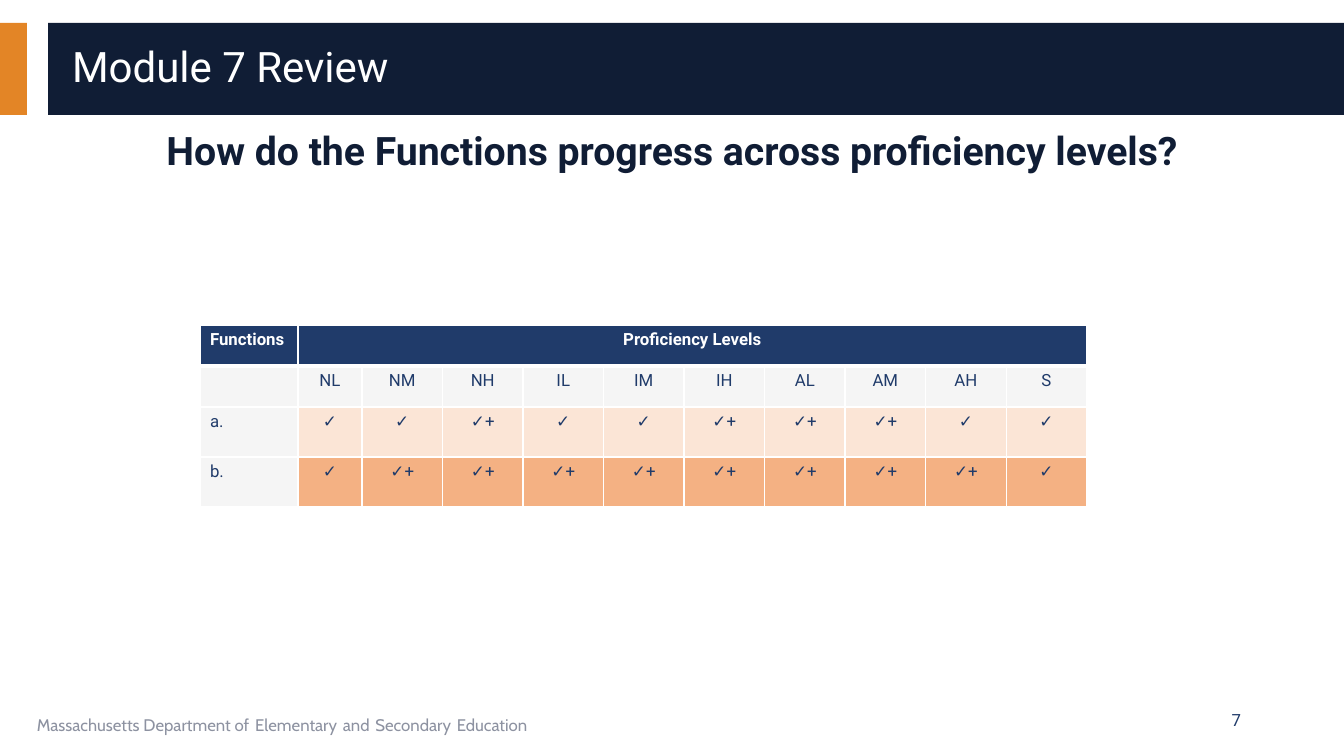
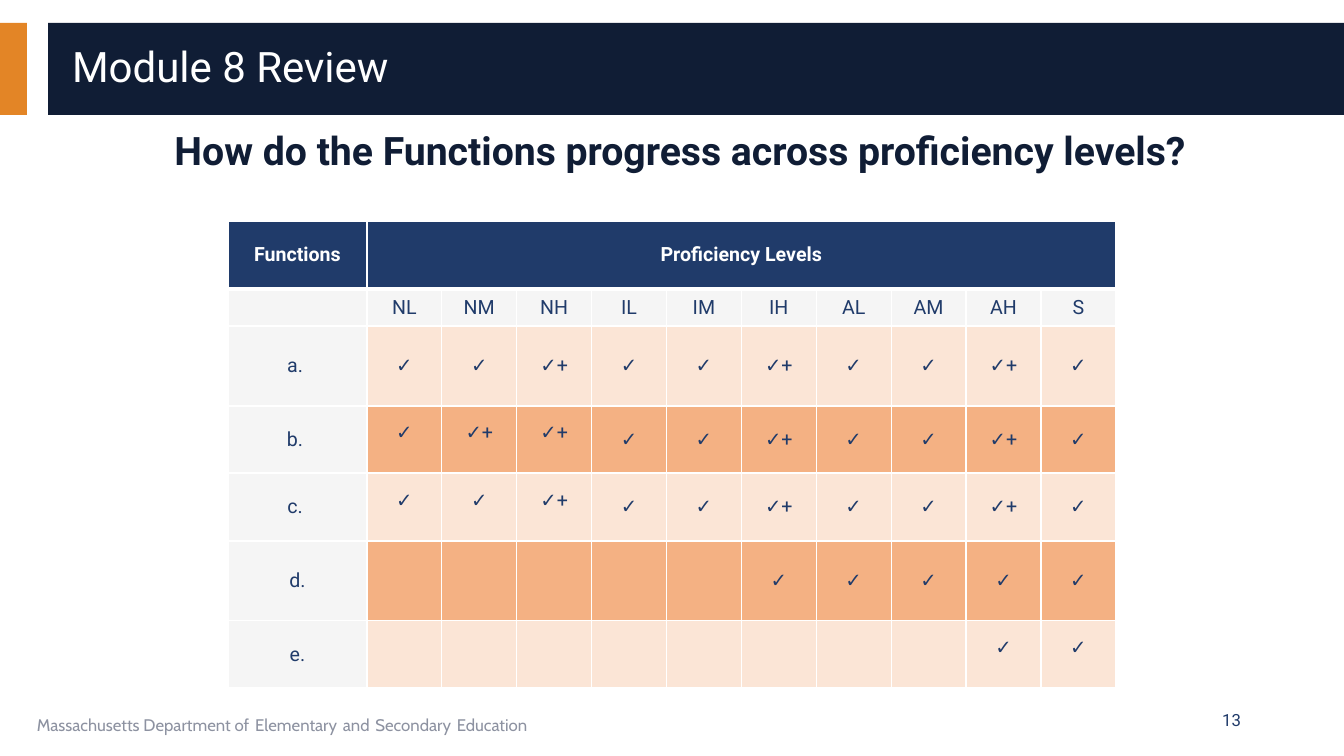
from lxml import etree
from pptx import Presentation
from pptx.dml.color import RGBColor
from pptx.enum.shapes import MSO_SHAPE
from pptx.enum.text import MSO_ANCHOR, PP_ALIGN
from pptx.oxml.ns import qn
from pptx.util import Pt

RECTANGLE = MSO_SHAPE.RECTANGLE
TOP, MIDDLE = MSO_ANCHOR.TOP, MSO_ANCHOR.MIDDLE
LEFT, CENTER, RIGHT = PP_ALIGN.LEFT, PP_ALIGN.CENTER, PP_ALIGN.RIGHT

# Shared style
SCALE = 12192000 / 1344  # EMU per px
NAVY, BLUE, ORANGE, WHITE = "101D35", "203B6A", "E38526", "FFFFFF"
GRAY, LABEL_FILL = "8D92A1", "F5F5F5"
BAND_FILLS = ["FBE5D6", "F4B183"]
FONT, FOOTER_FONT = "Roboto", "Cabin"
FOOTER = ["Massachusetts Department of", "Elementary", "and", "Secondary", "Education"]
QUESTION = "How do the Functions progress across proficiency levels?"
LEVELS = ",NL,NM,NH,IL,IM,IH,AL,AM,AH,S"

# Table rows hold a label and one mark per level; raised cells sit a little higher
REVIEWS = [
    {
        "title": "Module 7 Review", "number": "7", "question": (46, 1252),
        "corner": (200, 325), "widths": [98, 64] + [725 / 9] * 9,
        "heights": [41, 41, 50, 50],
        "size": 12, "anchor": TOP, "label_align": LEFT, "raised": set(),
        "rows": [
            "a.,✓,✓,✓+,✓,✓,✓+,✓+,✓+,✓,✓",
            "b.,✓,✓+,✓+,✓+,✓+,✓+,✓+,✓+,✓+,✓",
        ],
    },
    {
        "title": "Module 8 Review", "number": "13", "question": (45, 1270),
        "corner": (228, 221), "widths": [139] + [749 / 10] * 10,
        "heights": [68, 37, 80, 67, 68, 80, 67],
        "size": 14, "anchor": MIDDLE, "label_align": CENTER,
        "raised": {(3, 1), (3, 2), (3, 3), (4, 1), (4, 2), (4, 3), (6, 9), (6, 10)},
        "rows": [
            "a. ,✓,✓,✓+,✓,✓,✓+,✓,✓,✓+,✓",
            "b. ,✓,✓+,✓+,✓,✓,✓+,✓,✓,✓+,✓",
            "c. ,✓,✓,✓+,✓,✓,✓+,✓,✓,✓+,✓",
            "d.,,,,,,✓,✓,✓,✓,✓",
            "e.,,,,,,,,,✓,✓",
        ],
    },
]


def px(length):
    return round(length * SCALE)


def style(paragraph, size, color, font=FONT, bold=False, align=LEFT):
    paragraph.alignment = align
    for run in paragraph.runs:
        run.font.size = Pt(size)
        run.font.name = font
        run.font.bold = bold
        run.font.color.rgb = RGBColor.from_string(color)


presentation = Presentation()
presentation.slide_width, presentation.slide_height = px(1344), px(756)
layout = presentation.slide_layouts[5]
layout_title, *unused = layout.placeholders
for placeholder in unused:
    placeholder.element.getparent().remove(placeholder.element)

for index, review in enumerate(REVIEWS):
    slide = presentation.slides.add_slide(layout)

    # Bands and footer: made once, then moved to the layout
    if index == 0:
        shared = []
        for left, width, color in [(0, 27, ORANGE), (48, 1296, NAVY)]:
            band = slide.shapes.add_shape(RECTANGLE, px(left), px(23), px(width), px(92))
            band.shadow.inherit = False
            band.fill.solid()
            band.fill.fore_color.rgb = RGBColor.from_string(color)
            band.line.fill.background()
            shared.append(band)
        footer = slide.shapes.add_textbox(px(27), px(701), px(851), px(40))
        footer.text_frame.word_wrap = True
        footer.text_frame.vertical_anchor = MIDDLE
        paragraph = footer.text_frame.paragraphs[0]
        for word in FOOTER:
            if paragraph.runs:
                paragraph.add_run().text = " "
            paragraph.add_run().text = word
        style(paragraph, 12, GRAY, FOOTER_FONT)
        for space in paragraph.runs[1::2]:
            space.font.size = Pt(18)
        shared.append(footer)
        for shape in shared:
            layout_title.element.addprevious(shape.element)

    # Title
    title = slide.shapes.title
    title.left, title.top, title.width, title.height = px(62), px(39), px(1254), px(60)
    title.text_frame.text = review["title"]
    title.text_frame.vertical_anchor = MIDDLE
    title.text_frame.paragraphs[0].line_spacing = 0.9
    style(title.text_frame.paragraphs[0], 30, WHITE)

    # Question and slide number
    left, width = review["question"]
    for box, text, size, color, bold, align, anchor in [
        ((left, 127, width, 50), QUESTION, 28, NAVY, True, CENTER, TOP),
        ((949, 701, 302, 40), review["number"], 12, BLUE, False, RIGHT, MIDDLE),
    ]:
        shape = slide.shapes.add_textbox(*map(px, box))
        shape.text_frame.word_wrap = True
        shape.text_frame.vertical_anchor = anchor
        shape.text_frame.text = text
        paragraph = shape.text_frame.paragraphs[0]
        paragraph.line_spacing = 0.9
        style(paragraph, size, color, bold=bold, align=align)

    # Table grid
    widths, heights = review["widths"], review["heights"]
    left, top = review["corner"]
    table = slide.shapes.add_table(
        len(heights), len(widths), px(left), px(top), px(sum(widths)), px(sum(heights))
    ).table
    table.horz_banding = False
    for column, width in zip(table.columns, widths):
        column.width = px(width)
    for row, height in zip(table.rows, heights):
        row.height = px(height)
    table.cell(0, 1).merge(table.cell(0, len(widths) - 1))

    # Table cells
    header = ["Functions", "Proficiency Levels"] + [""] * (len(widths) - 2)
    contents = [header] + [line.split(",") for line in [LEVELS, *review["rows"]]]
    for row_index, texts in enumerate(contents):
        is_header = row_index == 0
        for column_index, text in enumerate(texts):
            cell = table.cell(row_index, column_index)
            properties = cell._tc.get_or_add_tcPr()
            for side in "LRTB":
                thick = (row_index, side) in [(0, "B"), (1, "T")]
                line = etree.SubElement(properties, qn(f"a:ln{side}"), w=str(Pt(3 if thick else 1)))
                fill = etree.SubElement(line, qn("a:solidFill"))
                etree.SubElement(fill, qn("a:srgbClr"), val=WHITE)

            if is_header:
                color = BLUE
            elif row_index == 1 or column_index == 0:
                color = LABEL_FILL
            else:
                color = BAND_FILLS[row_index % 2]
            cell.fill.solid()
            cell.fill.fore_color.rgb = RGBColor.from_string(color)

            cell.vertical_anchor = review["anchor"]
            if not text:
                cell.margin_top = cell.margin_bottom = 0
                continue
            if (row_index, column_index) in review["raised"]:
                cell.margin_bottom = px(18)
            cell.text_frame.text = text
            align = review["label_align"] if column_index == 0 else CENTER
            style(cell.text_frame.paragraphs[0], review["size"],
                  WHITE if is_header else BLUE, bold=is_header, align=align)

presentation.save("out.pptx")
